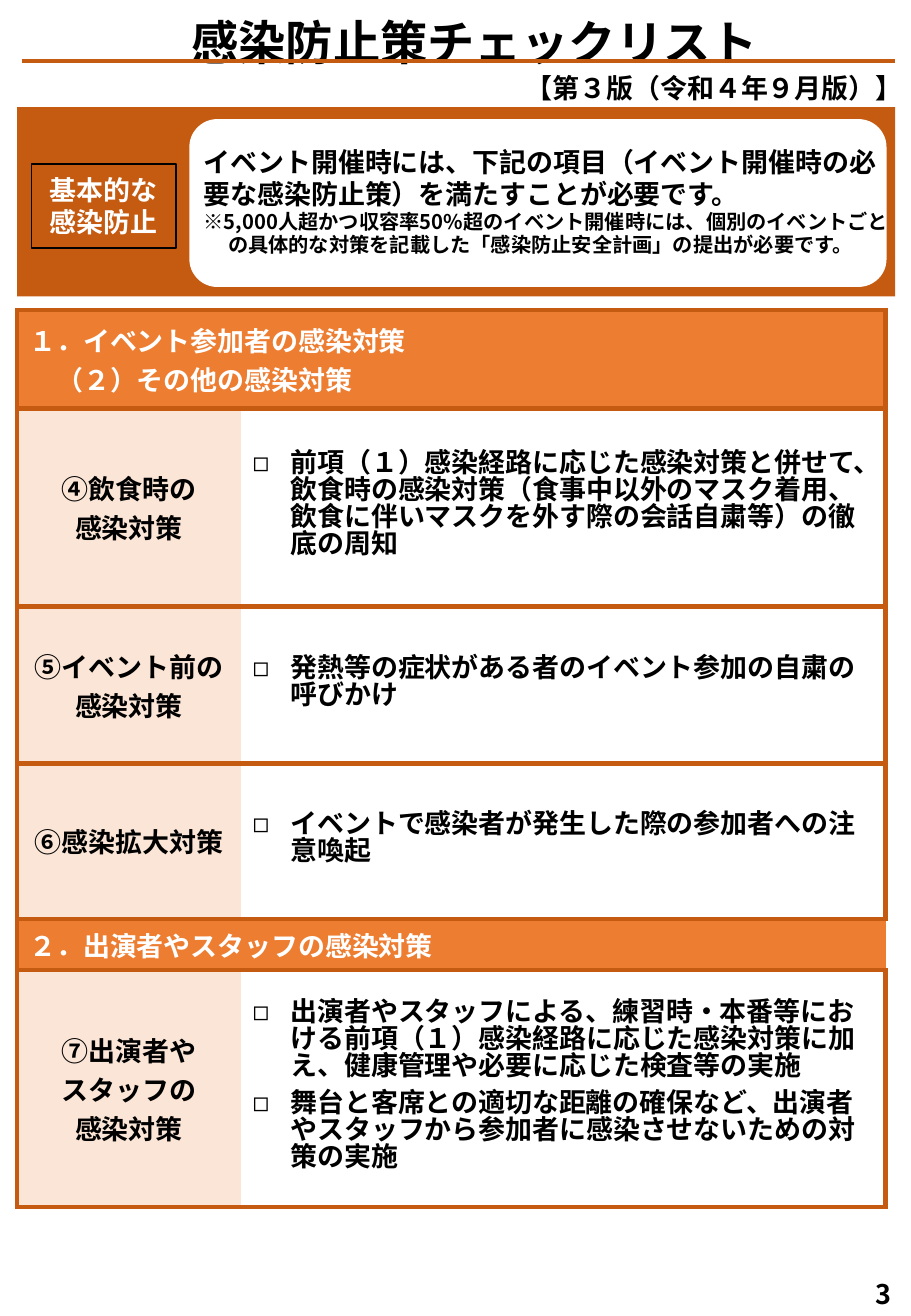
from lxml.etree import SubElement
from pptx import Presentation
from pptx.dml.color import RGBColor
from pptx.enum.shapes import MSO_CONNECTOR, MSO_SHAPE
from pptx.enum.text import MSO_ANCHOR, MSO_AUTO_SIZE, PP_ALIGN
from pptx.oxml.ns import qn
from pptx.util import Cm, Pt

BLACK = RGBColor(0x00, 0x00, 0x00)
WHITE = RGBColor(0xFF, 0xFF, 0xFF)
RUST = RGBColor(0xC5, 0x5A, 0x11)
ORANGE = RGBColor(0xED, 0x7D, 0x31)
PEACH = RGBColor(0xFB, 0xE5, 0xD6)
JAPANESE = "Noto Sans CJK JP"
LATIN = "Calibri"

TABLE_ROWS = [
    (2.06, ["１．イベント参加者の感染対策", "\u3000（２）その他の感染対策".replace("\u3000", "　")], None),
    (4.14, ["④飲食時の", "感染対策"],
     ["前項（１）感染経路に応じた感染対策と併せて、飲食時の感染対策（食事中以外のマスク着用、"
      "飲食に伴いマスクを外す際の会話自粛等）の徹底の周知"]),
    (3.28, ["⑤イベント前の感染対策"],
     ["発熱等の症状がある者のイベント参加の自粛の呼びかけ"]),
    (3.25, ["⑥感染拡大対策"],
     ["イベントで感染者が発生した際の参加者への注意喚起"]),
    (1.07, ["２．出演者やスタッフの感染対策"], None),
    (4.95, ["⑦出演者や", "スタッフの", "感染対策"],
     ["出演者やスタッフによる、練習時・本番等における前項（１）感染経路に応じた感染対策に加え、"
      "健康管理や必要に応じた検査等の実施",
      "舞台と客席との適切な距離の確保など、出演者やスタッフから参加者に感染させないための対策の実施"]),
]


def write_paragraph(paragraph, text, size=16, color=BLACK, font=JAPANESE,
                    align=PP_ALIGN.LEFT, spacing=None, after=0, hanging=0, bullet=None):
    paragraph.alignment = align
    paragraph.space_before = Pt(0)
    paragraph.space_after = Pt(after)
    if spacing:
        paragraph.line_spacing = Pt(spacing)
    properties = paragraph._p.get_or_add_pPr()
    if hanging:
        properties.set("marL", str(Cm(hanging)))
        properties.set("indent", str(-Cm(hanging)))
    if bullet:
        SubElement(properties, qn("a:buFont")).set("typeface", JAPANESE)
        SubElement(properties, qn("a:buChar")).set("char", bullet)
    run = paragraph.add_run()
    run.text = text
    run.font.size = Pt(size)
    run.font.bold = True
    run.font.color.rgb = color
    run.font.name = font
    SubElement(run._r.get_or_add_rPr(), qn("a:ea")).set("typeface", JAPANESE)


def write_lines(frame, lines, **style):
    for index, line in enumerate(lines):
        paragraph = frame.add_paragraph() if index else frame.paragraphs[0]
        write_paragraph(paragraph, line, **style)


class ChecklistSlide:
    def __init__(self, presentation):
        self.slide = presentation.slides.add_slide(presentation.slide_layouts[5])
        self.shapes = self.slide.shapes

    def title(self, text, left, top, width, height):
        title = self.shapes.title
        title.left, title.top, title.width, title.height = map(Cm, (left, top, width, height))
        frame = title.text_frame
        frame.auto_size = MSO_AUTO_SIZE.NONE
        frame.vertical_anchor = MSO_ANCHOR.MIDDLE
        write_paragraph(frame.paragraphs[0], text, size=28, align=PP_ALIGN.CENTER)

    def shape(self, kind, left, top, width, height, fill=None, line=None):
        shape = self.shapes.add_shape(kind, Cm(left), Cm(top), Cm(width), Cm(height))
        shape.shadow.inherit = False
        if fill is None:
            shape.fill.background()
        else:
            shape.fill.solid()
            shape.fill.fore_color.rgb = fill
        if line is None:
            shape.line.fill.background()
        else:
            shape.line.color.rgb = line
            shape.line.width = Pt(1)
        return shape

    def rule(self, left, right, y):
        rule = self.shapes.add_connector(
            MSO_CONNECTOR.STRAIGHT, Cm(left), Cm(y), Cm(right), Cm(y))
        rule.line.color.rgb = RUST
        rule.line.width = Pt(2.25)
        SubElement(rule._element.spPr, qn("a:effectLst"))

    def text_box(self, left, top, width, height, margin=0.25, anchor=MSO_ANCHOR.TOP):
        frame = self.shapes.add_textbox(
            Cm(left), Cm(top), Cm(width), Cm(height)).text_frame
        frame.word_wrap = True
        frame.margin_left = frame.margin_right = Cm(margin)
        frame.vertical_anchor = anchor
        return frame

    def border(self, cell, sides):
        properties = cell._tc.get_or_add_tcPr()
        for side in "LRTB":
            line = SubElement(properties, qn(f"a:ln{side}"))
            if side in sides:
                line.set("w", str(Pt(3)))
                fill = SubElement(line, qn("a:solidFill"))
                SubElement(fill, qn("a:srgbClr")).set("val", str(RUST))
            else:
                line.set("w", "0")
                SubElement(line, qn("a:noFill"))

    def cell(self, cell, lines, fill, sides, **style):
        self.border(cell, sides)
        cell.fill.solid()
        cell.fill.fore_color.rgb = fill
        cell.vertical_anchor = MSO_ANCHOR.MIDDLE
        cell.margin_top = cell.margin_bottom = Cm(0.1)
        write_lines(cell.text_frame, lines, **style)

    def table(self, rows, left, top, widths):
        height = sum(row[0] for row in rows)
        table = self.shapes.add_table(
            len(rows), len(widths), Cm(left), Cm(top), Cm(sum(widths)), Cm(height)).table
        table.first_row = table.horz_banding = False
        for column, width in zip(table.columns, widths):
            column.width = Cm(width)
        for index, (row_height, heading, items) in enumerate(rows):
            table.rows[index].height = Cm(row_height)
            first, second = table.cell(index, 0), table.cell(index, 1)
            if items is None:
                sides = "LTB" if index else "LRTB"
                first.merge(second)
                self.cell(first, heading, ORANGE, sides, font=LATIN, color=WHITE)
                self.border(second, sides.replace("L", ""))
            else:
                self.cell(first, heading, PEACH, "LTB", font=LATIN, align=PP_ALIGN.CENTER)
                self.cell(second, items, WHITE, "RTB", spacing=16, after=6,
                          hanging=0.79, bullet="◻")


def main():
    presentation = Presentation()
    presentation.slide_width, presentation.slide_height = Cm(19.05), Cm(27.51)
    checklist = ChecklistSlide(presentation)

    checklist.title("感染防止策チェックリスト", 0.8, 0.15, 18.25, 1.45)
    checklist.rule(0.46, 18.72, 1.27)
    version = checklist.text_box(10.84, 1.37, 8.2, 0.94, margin=0)
    write_lines(version, ["【第３版（令和４年９月版）】"], align=PP_ALIGN.CENTER)

    checklist.shape(MSO_SHAPE.RECTANGLE, 0.36, 2.24, 18.36, 3.96, fill=RUST)
    checklist.shape(MSO_SHAPE.ROUNDED_RECTANGLE, 3.96, 2.49, 14.58, 3.51, fill=WHITE)
    label = checklist.shape(MSO_SHAPE.RECTANGLE, 0.66, 3.43, 3.02, 1.75, line=BLACK)
    label.text_frame.vertical_anchor = MSO_ANCHOR.MIDDLE
    write_lines(label.text_frame, ["基本的な", "感染防止"],
                color=WHITE, align=PP_ALIGN.CENTER, spacing=19)

    notice = checklist.text_box(4.01, 2.92, 14.83, 2.72)
    write_lines(notice, ["イベント開催時には、下記の項目（イベント開催時の必要な感染防止策）を満たすことが必要です。"],
                spacing=19)
    write_paragraph(notice.add_paragraph(),
                    "※5,000人超かつ収容率50%超のイベント開催時には、個別のイベントごとの具体的な対策を"
                    "記載した「感染防止安全計画」の提出が必要です。",
                    size=12, spacing=14, hanging=0.51)

    checklist.table(TABLE_ROWS, 0.36, 6.48, [4.67, 13.49])

    page_number = checklist.text_box(17.89, 26.57, 1.16, 0.94, margin=0, anchor=MSO_ANCHOR.MIDDLE)
    write_lines(page_number, ["3"], align=PP_ALIGN.CENTER)

    presentation.save("out.pptx")


if __name__ == "__main__":
    main()
